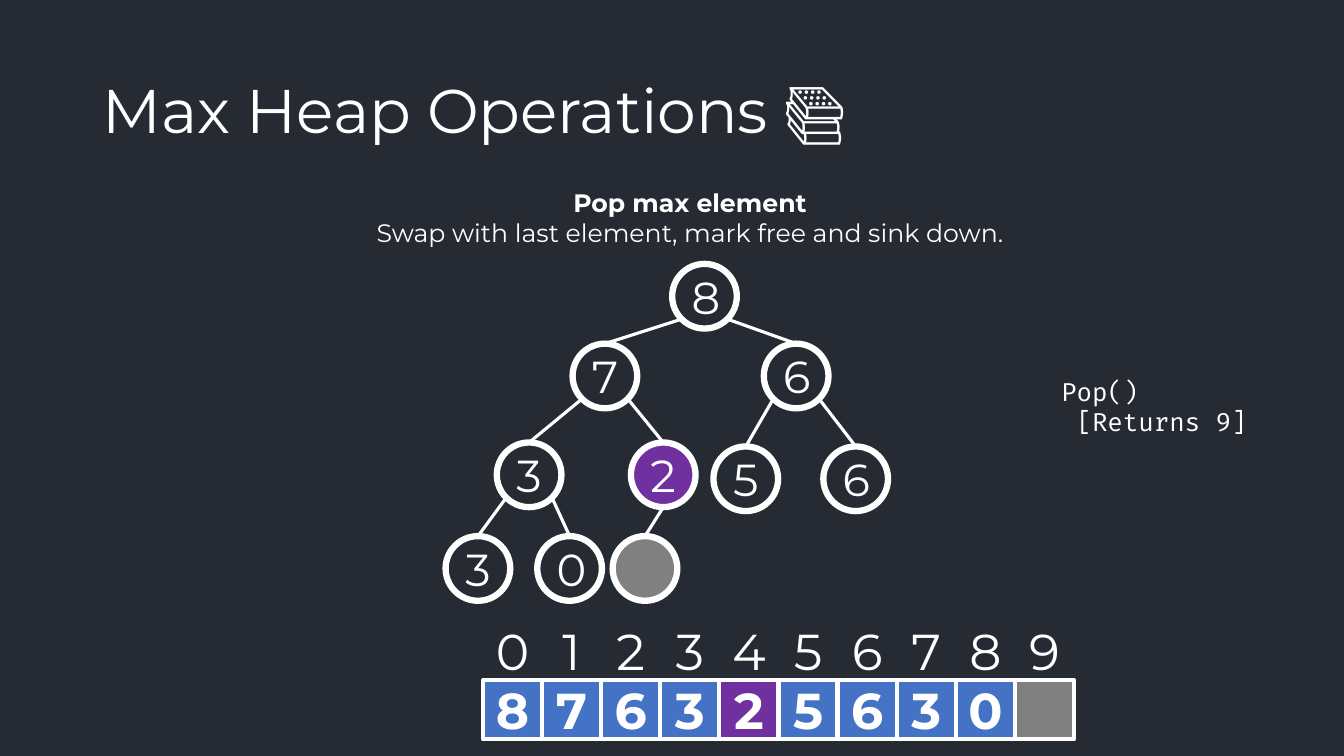
from math import cos, pi

from lxml.etree import SubElement
from pptx import Presentation
from pptx.dml.color import RGBColor
from pptx.enum.shapes import MSO_CONNECTOR, MSO_SHAPE
from pptx.enum.text import MSO_ANCHOR, PP_ALIGN
from pptx.oxml.ns import qn
from pptx.util import Cm, Pt

WHITE, DARK, BLUE, PURPLE, GREY = "FFFFFF", "262A33", "4472C4", "7030A0", "808080"
SANS, MONO = "Montserrat", "Fira Code"

HEAP = ["8", "7", "6", "3", "2", "5", "6", "3", "0", ""]
SINKING, FREE = 4, 9
NODE = 1.63  # node diameter, cm
# Top left corner of each node inside the tree box, in heap order
NODE_SPOTS = [(5.71, 0), (3.2, 2.01), (8.02, 2.01), (1.29, 4.5), (4.67, 4.5),
              (6.75, 4.6), (9.52, 4.6), (0, 6.86), (2.31, 6.86), (4.21, 6.86)]


def rgb(color):
    return RGBColor.from_string(color)


def write(tf, lines, size, font=SANS, align=PP_ALIGN.CENTER):
    """Fill a text frame with one paragraph per (text, bold) pair."""
    for i, (text, bold) in enumerate(lines):
        p = tf.add_paragraph() if i else tf.paragraphs[0]
        p.alignment = align
        r = p.add_run()
        r.text = text
        r.font.name = font
        r.font.size = Pt(size)
        r.font.bold = bold
        r.font.color.rgb = rgb(WHITE)


def add_text(slide, box, lines, size, font=SANS, align=PP_ALIGN.CENTER,
             anchor=MSO_ANCHOR.TOP, wrap=True):
    tf = slide.shapes.add_textbox(*map(Cm, box)).text_frame
    tf.word_wrap = wrap
    tf.vertical_anchor = anchor
    write(tf, lines, size, font, align)


def add_marker(slide, kind, box, text, fill, weight, size, bold):
    """Draw a white-outlined node or cell holding one heap value."""
    sp = slide.shapes.add_shape(kind, *map(Cm, box))
    sp.shadow.inherit = False
    if fill:
        sp.fill.solid()
        sp.fill.fore_color.rgb = rgb(fill)
    else:
        sp.fill.background()
    sp.line.color.rgb = rgb(WHITE)
    sp.line.width = Pt(weight)
    sp.text_frame.vertical_anchor = MSO_ANCHOR.MIDDLE
    if text:
        write(sp.text_frame, [(text, bold)], size)


def add_edge(slide, start, end):
    line = slide.shapes.add_connector(MSO_CONNECTOR.STRAIGHT, *map(Cm, start + end))
    line.line.color.rgb = rgb(WHITE)
    line.line.width = Pt(2.25)
    SubElement(line._element.spPr, qn("a:effectLst"))


def add_title(slide, box, text):
    sp = slide.shapes.title
    sp.left, sp.top, sp.width, sp.height = map(Cm, box)
    sp.text_frame.vertical_anchor = MSO_ANCHOR.MIDDLE
    write(sp.text_frame, [(text, False)], 44, align=PP_ALIGN.LEFT)
    sp.text_frame.paragraphs[0].line_spacing = 0.9


def add_tree(slide, left, top):
    spots = [(left + x, top + y) for x, y in NODE_SPOTS]
    radius = NODE / 2
    for child in range(1, len(spots)):
        parent_x, parent_y = spots[(child - 1) // 2]
        child_x, child_y = spots[child]
        if child == FREE:  # an only child hangs from the bottom of its parent
            dx, dy = 0, radius
        else:
            dy = radius * cos(pi / 4)
            dx = -dy if child % 2 else dy
        add_edge(slide, (parent_x + radius + dx, parent_y + radius + dy),
                 (child_x + radius, child_y))
    fills = {SINKING: PURPLE, FREE: GREY}
    for i, (x, y) in enumerate(spots):
        add_marker(slide, MSO_SHAPE.OVAL, (x, y, NODE, NODE), HEAP[i],
                   fills.get(i), 4.5, 32, False)


def add_array(slide, left, top, cell):
    """Draw the row of indices with the row of heap cells below it."""
    fills = {SINKING: PURPLE, FREE: GREY}
    for i, value in enumerate(HEAP):
        x = left + i * cell
        add_text(slide, (x, top, cell, cell), [(str(i), False)], 36,
                 anchor=MSO_ANCHOR.MIDDLE)
        add_marker(slide, MSO_SHAPE.RECTANGLE, (x, top + cell, cell, cell), value,
                   fills.get(i, BLUE), 3, 36, True)


def main():
    prs = Presentation()
    prs.slide_width, prs.slide_height = Cm(33.87), Cm(19.05)
    slide = prs.slides.add_slide(prs.slide_layouts[5])
    slide.background.fill.solid()
    slide.background.fill.fore_color.rgb = rgb(DARK)

    add_title(slide, (2.33, 1.01, 29.21, 3.68), "Max Heap Operations 📚")
    add_text(slide, (7.14, 4.6, 20.5, 1.8),
             [("Pop max element", True),
              ("Swap with last element, mark free and sink down.", False)], 18)
    add_tree(slide, 11.23, 6.65)
    add_array(slide, 12.17, 15.65, 1.49)
    add_text(slide, (26.49, 9.35, 5.26, 1.8),
             [("Pop()", False), (" [Returns 9]", False)], 18,
             font=MONO, align=PP_ALIGN.LEFT, wrap=False)
    prs.save("out.pptx")


if __name__ == "__main__":
    main()
